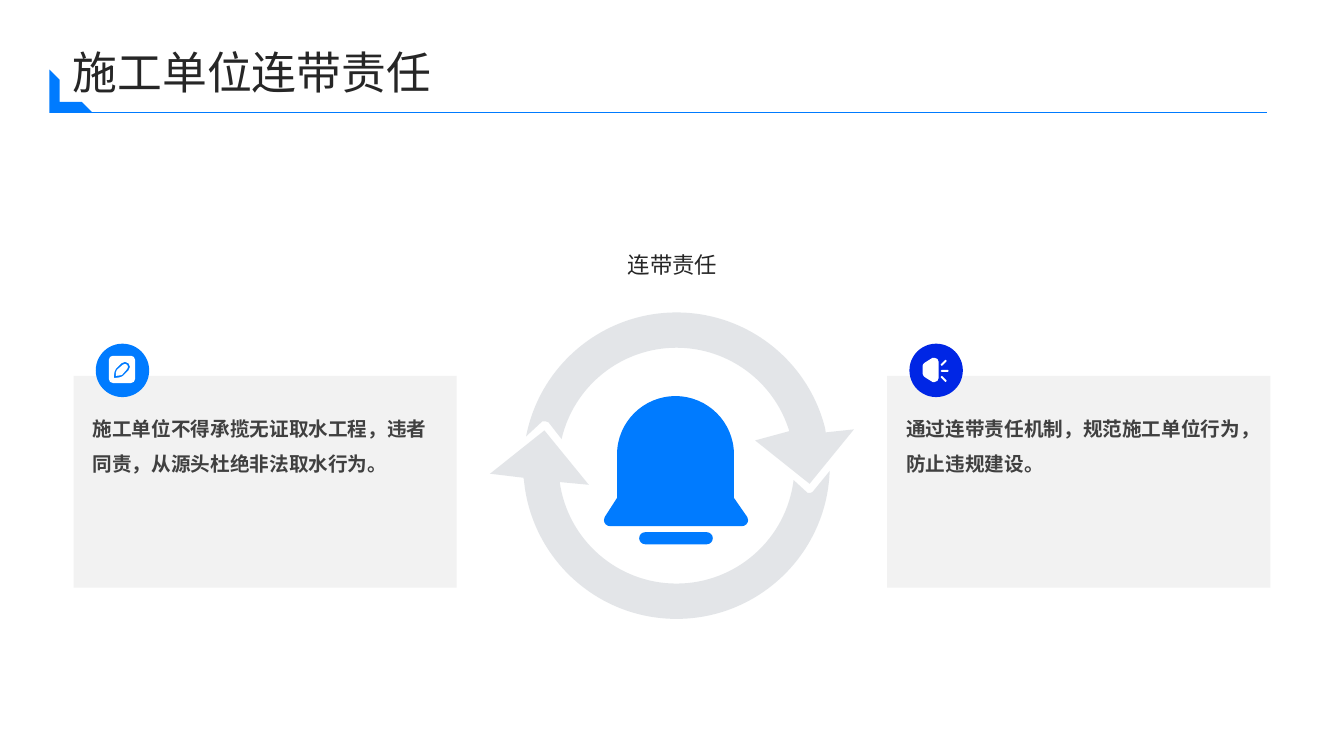
import math
from dataclasses import dataclass

from lxml import etree
from pptx import Presentation
from pptx import util as u
from pptx.dml.color import RGBColor
from pptx.enum import shapes, text
from pptx.oxml import ns

# The slide is a grid of one-inch columns and rows.
COLUMNS, ROWS = 13.33, 7.5
CARD_WIDTH, CARD_HEIGHT, CARD_TOP = 3.8, 2.1, 3.73
BADGE_SIZE = 0.53
RING_CENTER, RING_INNER, RING_OUTER = (6.71, 4.62), 1.17, 1.52


@dataclass(frozen=True)
class Theme:
    font: str = "Noto Sans CJK SC"
    blue: str = "007BFF"
    deep_blue: str = "0026E5"
    slate: str = "44546A"
    panel: str = "F2F2F2"
    white: str = "FFFFFF"
    heading: str = "262626"
    body: str = "404040"
    title_size: int = 32
    label_size: int = 16
    body_size: int = 14


THEME = Theme()


def grid(*cells):
    return [u.Inches(cell) for cell in cells]


def set_attributes(target, values):
    for name, value in values.items():
        setattr(target, name, value)


def lines(*points):
    """Straight segments: one point each."""
    return [(point,) for point in points]


def arc(center, radius, start, end):
    """A line to the arc's start, then curves of three points, split at quadrants.

    Degrees run clockwise from the right.
    """
    def place(angle, tangent=0):
        a = math.radians(angle)
        return (center[0] + radius * (math.cos(a) - tangent * math.sin(a)),
                center[1] + radius * (math.sin(a) + tangent * math.cos(a)))

    low, high = sorted((start, end))
    splits = [a for a in range(-360, 721, 90) if low < a < high]
    stops = sorted([low, *splits, high], reverse=start > end)
    segments = lines(place(start))
    for a, b in zip(stops, stops[1:]):
        handle = 4 / 3 * math.tan(math.radians(b - a) / 4)
        segments.append((place(a, handle), place(b, -handle), place(b)))
    return segments


def capsule(start, end, radius):
    angle = math.degrees(math.atan2(end[1] - start[1], end[0] - start[0]))
    return (arc(end, radius, angle - 90, angle + 90)
            + arc(start, radius, angle + 90, angle + 270))


def paint(shape, color, opacity=None):
    shape.shadow.inherit = False
    shape.line.fill.background()
    shape.fill.solid()
    shape.fill.fore_color.rgb = RGBColor.from_string(color)
    if opacity is not None:
        color_node = shape._element.spPr.find(".//" + ns.qn("a:srgbClr"))
        etree.SubElement(color_node, ns.qn("a:alpha"), val=str(opacity * 1000))


def bend(shape, segments):
    """Join the three straight steps of each curved segment into one Bézier curve."""
    steps = iter(shape._element.findall(".//" + ns.qn("a:lnTo")))
    for segment in segments:
        first, *others = [next(steps) for _ in segment]
        if others:
            first.tag = ns.qn("a:cubicBezTo")
            for step in others:
                first.append(step[0])
                step.getparent().remove(step)


def add_outline(slide, contours, color, opacity=None):
    builder = None
    for contour in contours:
        points = [tuple(grid(*point)) for segment in contour for point in segment]
        if builder is None:
            builder = slide.shapes.build_freeform(*points[0])
        else:
            builder.move_to(*points[0])
        builder.add_line_segments(points[1:], close=True)
    shape = builder.convert_to_shape()
    bend(shape, [segment for contour in contours for segment in contour[1:]])
    paint(shape, color, opacity)


def add_preset(slide, kind, cells, color, adjustments=(), rotation=0):
    shape = slide.shapes.add_shape(kind, *grid(*cells))
    for index, value in enumerate(adjustments):
        shape.adjustments[index] = value
    shape.rotation = rotation
    paint(shape, color)


def write(shape, words, size, color, spacing, frame=None, bold=False,
          align=text.PP_ALIGN.LEFT):
    set_attributes(shape.text_frame, {
        "word_wrap": True, "auto_size": text.MSO_AUTO_SIZE.NONE, **(frame or {})})
    paragraph = shape.text_frame.paragraphs[0]
    set_attributes(paragraph, {"alignment": align, "line_spacing": spacing})
    run = paragraph.add_run()
    run.text = words
    set_attributes(run.font, {"name": THEME.font, "size": u.Pt(size), "bold": bold})
    run.font.color.rgb = RGBColor.from_string(color)
    etree.SubElement(run.font._element, ns.qn("a:ea"), typeface=THEME.font)


def flush_frame(anchor):
    sides = ("left", "top", "right", "bottom")
    return {"vertical_anchor": anchor, **{f"margin_{side}": 0 for side in sides}}


def add_heading(slide, words):
    title = slide.shapes.title
    set_attributes(title, dict(zip(("left", "top", "width", "height"),
                                   grid(0.72, 0.43, 11.88, 0.51))))
    write(title, words, THEME.title_size, THEME.heading, 1.1,
          flush_frame(text.MSO_ANCHOR.MIDDLE))
    add_preset(slide, shapes.MSO_SHAPE.HALF_FRAME, (0.49, 0.69, 0.43, 0.43),
               THEME.blue, (0.239, 0.252), 270)
    rule = slide.shapes.add_connector(
        shapes.MSO_CONNECTOR.STRAIGHT, *grid(0.76, 1.12, 12.57, 1.12))
    rule.line.color.rgb = RGBColor.from_string(THEME.blue)
    rule.line.width = u.Pt(0.75)
    etree.SubElement(rule._element.spPr, ns.qn("a:effectLst"))


def add_label(slide, words):
    box = slide.shapes.add_textbox(*grid(1.01, 1.44, 11.32, 1.32))
    write(box, words, THEME.label_size, THEME.heading, 1.5,
          flush_frame(text.MSO_ANCHOR.BOTTOM), align=text.PP_ALIGN.CENTER)


def add_bell(slide):
    body = (arc((6.7, 4.51), 0.58, 180, 360) + lines((7.28, 4.94))
            + arc((7.36, 5.16), 0.06, -30, 90)
            + arc((6.05, 5.16), 0.06, 90, 210) + lines((6.12, 4.94)))
    clapper = capsule((6.4, 5.34), (7.01, 5.34), 0.06)
    add_outline(slide, [clapper, body], THEME.blue)


def add_cycle(slide):
    lower = (arc(RING_CENTER, RING_INNER, 7, 172)
             + lines((5.84, 4.81), (5.4, 4.27), (4.86, 4.7), (5.19, 4.74))
             + arc(RING_CENTER, RING_OUTER, 175, 2)
             + lines((8.06, 4.88), (8.04, 4.89), (8.01, 4.89)))
    upper = (arc(RING_CENTER, RING_INNER, 193, 343)
             + lines((7.49, 4.37), (8.03, 4.8), (8.47, 4.26), (8.19, 4.29))
             + arc(RING_CENTER, RING_OUTER, 346, 191)
             + lines((5.38, 4.18), (5.41, 4.18), (5.44, 4.19)))
    for half in (lower, upper):
        add_outline(slide, [half], THEME.slate, 15)


def rounded_corners(*corners):
    """Quarter arcs, clockwise from the top right, around the given centers."""
    return [segment for index, center in enumerate(corners)
            for segment in arc(center, 0.04, 90 * index - 90, 90 * index)]


def pen_contours():
    tile = rounded_corners((1.3, 3.57), (1.3, 3.76), (1.12, 3.76), (1.12, 3.57))
    nib_center = (1.24, 3.64)
    rim = arc(nib_center, 0.05, -135, 45) + [
        ((1.22, 3.73),), ((1.2, 3.75), (1.13, 3.75), (1.13, 3.75)),
        ((1.13, 3.75), (1.13, 3.68), (1.15, 3.66))]
    nib = arc(nib_center, 0.03, -135, 45) + [
        ((1.21, 3.72),), ((1.2, 3.72), (1.18, 3.73), (1.15, 3.73)),
        ((1.15, 3.7), (1.15, 3.68), (1.16, 3.67))]
    return [nib, rim, tile]


def megaphone_contours():
    horn = rounded_corners((9.27, 3.59), (9.27, 3.75)) + [
        ((9.25, 3.79),), ((9.17, 3.74),), ((9.16, 3.73), (9.15, 3.72), (9.15, 3.7)),
        ((9.15, 3.63),), ((9.15, 3.62), (9.16, 3.61), (9.17, 3.6)), ((9.25, 3.55),)]
    rays = [capsule((9.34, 3.68 + near), (tip, 3.68 + far), 0.01)
            for near, tip, far in ((0.06, 9.38, 0.1), (0, 9.4, 0), (-0.06, 9.38, -0.1))]
    return [*rays, horn]


def add_card(slide, left, words, badge_color, icon):
    rounded = shapes.MSO_SHAPE.ROUNDED_RECTANGLE
    add_preset(slide, rounded, (left, CARD_TOP, CARD_WIDTH, CARD_HEIGHT),
               THEME.panel, (0,))
    box = slide.shapes.add_textbox(*grid(left + 0.09, CARD_TOP + 0.24, 3.69, 1.65))
    write(box, words, THEME.body_size, THEME.body, 1.5, bold=True)
    add_preset(slide, rounded, (left + 0.22, CARD_TOP - 0.32, BADGE_SIZE, BADGE_SIZE),
               badge_color, (0.5,))
    add_outline(slide, icon, THEME.white)


def main():
    presentation = Presentation()
    presentation.slide_width, presentation.slide_height = grid(COLUMNS, ROWS)
    title_only = presentation.slide_layouts[5]
    slide = presentation.slides.add_slide(title_only)
    add_bell(slide)
    add_cycle(slide)
    add_card(slide, 8.8, "通过连带责任机制，规范施工单位行为，防止违规建设。",
             THEME.deep_blue, megaphone_contours())
    add_card(slide, 0.73, "施工单位不得承揽无证取水工程，违者同责，从源头杜绝非法取水行为。",
             THEME.blue, pen_contours())
    add_label(slide, "连带责任")
    add_heading(slide, "施工单位连带责任")
    presentation.save("out.pptx")


if __name__ == "__main__":
    main()
